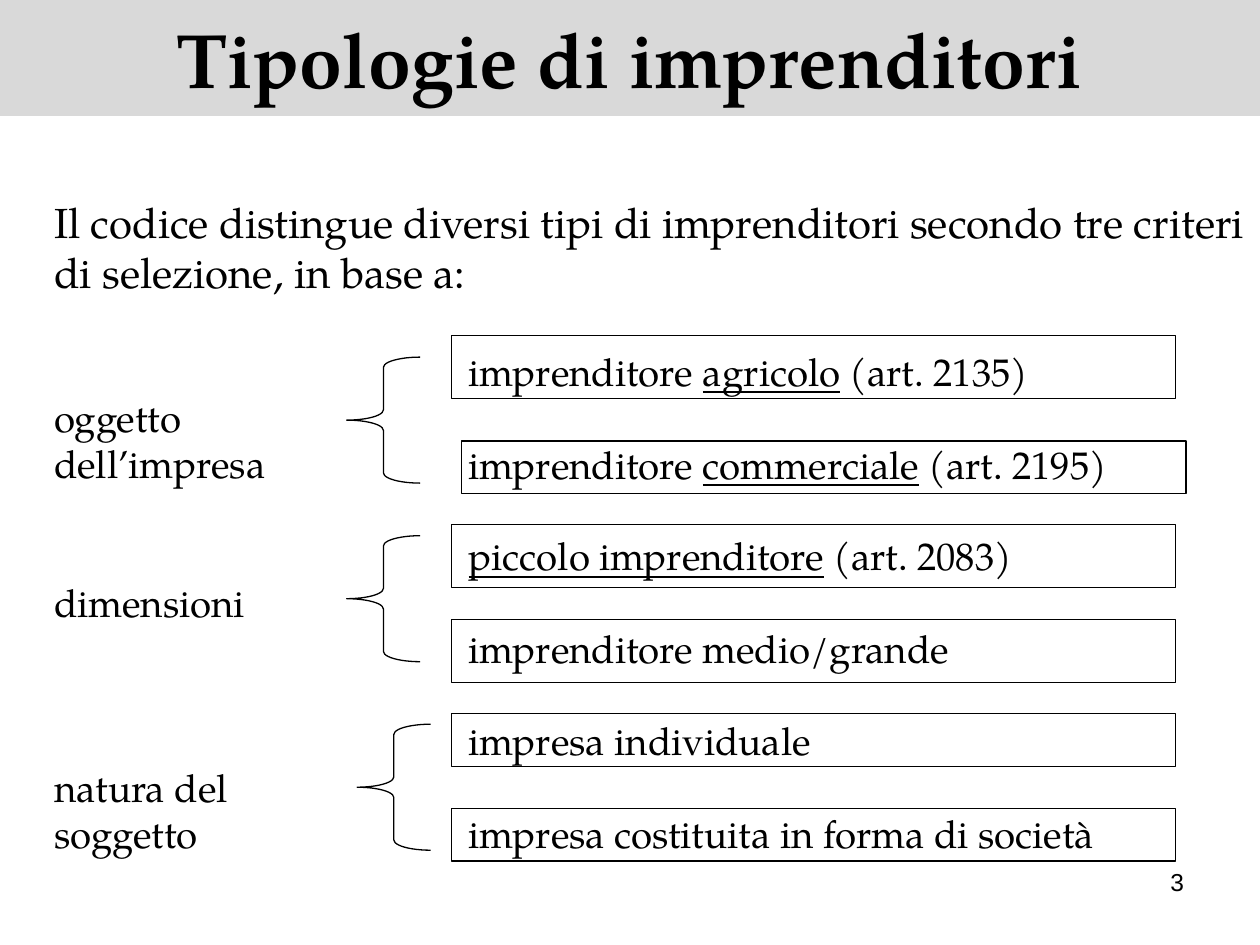
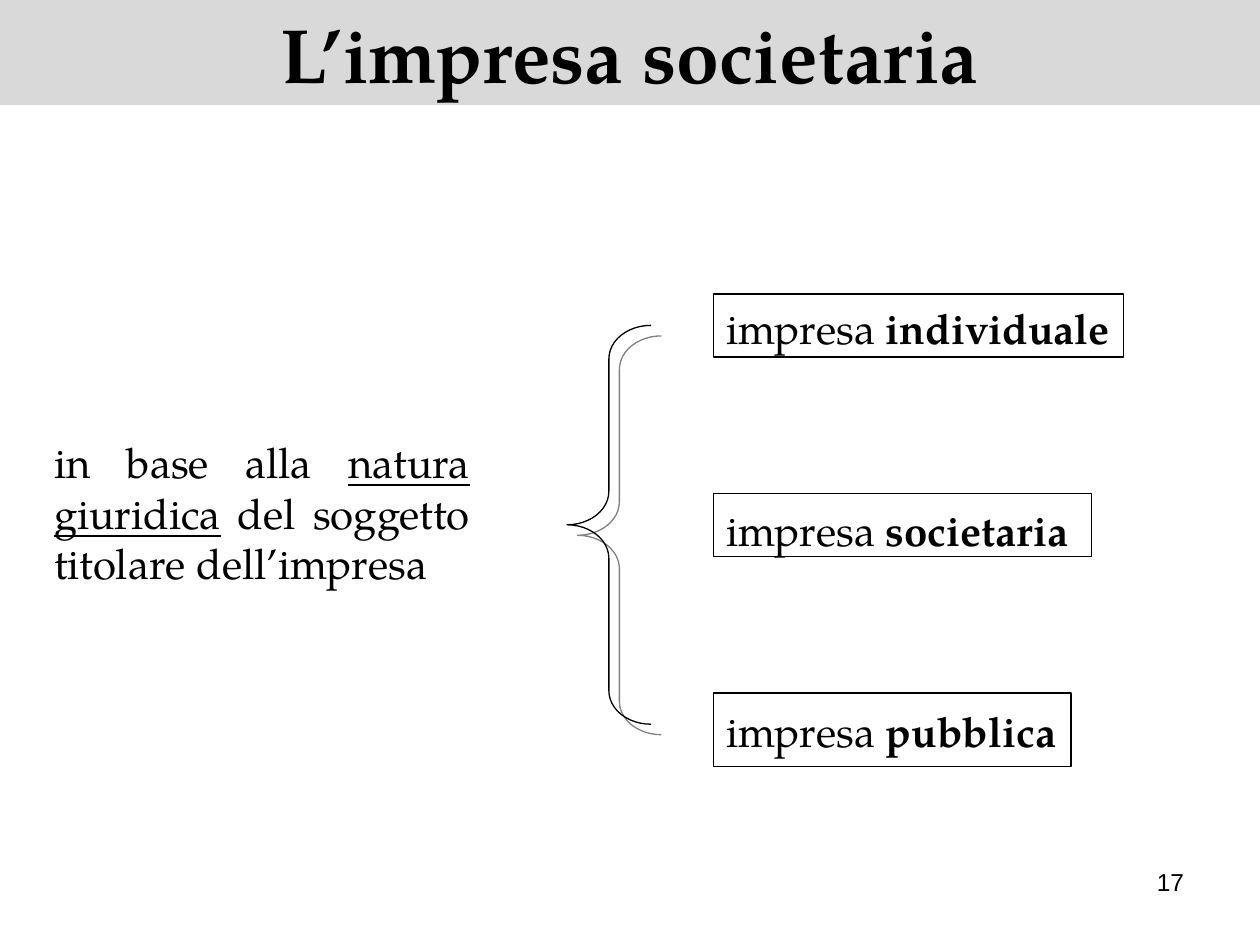
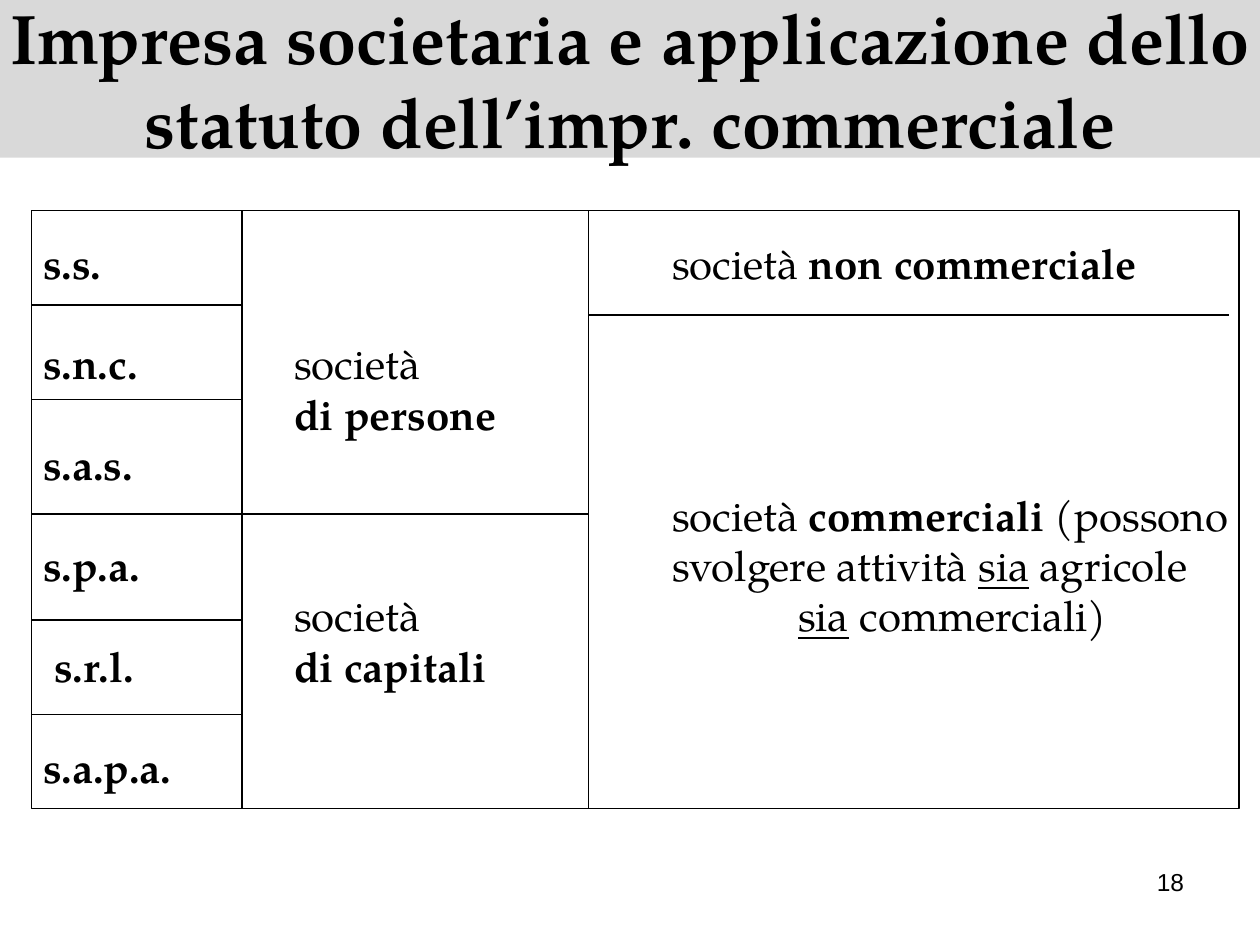
from dataclasses import dataclass

from lxml import etree
from pptx import Presentation
from pptx.dml.color import RGBColor
from pptx.enum import shapes, text
from pptx.oxml import ns
from pptx.util import Cm, Pt


@dataclass(frozen=True)
class Theme:
    ink: RGBColor = RGBColor(0, 0, 0)
    band: RGBColor = RGBColor(0xD9, 0xD9, 0xD9)
    shadow: str = "808080"
    face: str = "TeX Gyre Pagella"
    number_face: str = "Arial"
    title: int = 44
    long_title: int = 40
    body: int = 24
    item: int = 22
    number: int = 14
    rule: float = 0.75

    def pitch(self, size):
        """Height in cm of one line of text."""
        return size * 1.2 * 2.54 / 72


THEME = Theme()
WIDTH, HEIGHT = 25.4, 19.05
MARGIN = 1.09
LEFT, CENTER = text.PP_ALIGN.LEFT, text.PP_ALIGN.CENTER
RIGHT, JUSTIFY = text.PP_ALIGN.RIGHT, text.PP_ALIGN.JUSTIFY


# Text: a paragraph is a list of runs, a run is a string or (string, style)
def write(frame, paragraphs, size, align=LEFT, face=THEME.face, bold=None):
    for index, runs in enumerate(paragraphs):
        para = frame.paragraphs[0] if index == 0 else frame.add_paragraph()
        para.alignment = align
        para.font.name, para.font.size = face, Pt(size)
        para.font.color.rgb = THEME.ink
        para.font.bold = bold
        for words in runs:
            words, style = (words, "") if isinstance(words, str) else words
            run = para.add_run()
            run.text = words
            if style == "bold":
                run.font.bold = True
            elif style == "underline":
                run.font.underline = True


def set_insets(frame, left=0, top=0):
    frame.margin_left, frame.margin_top = Cm(left), Cm(top)
    frame.margin_right = frame.margin_bottom = 0


def add_text(slide, x, y, width, paragraphs, size, align=LEFT, **style):
    height = THEME.pitch(size) * len(paragraphs)
    frame = slide.shapes.add_textbox(Cm(x), Cm(y), Cm(width), Cm(height)).text_frame
    set_insets(frame)
    frame.word_wrap = align != LEFT
    write(frame, paragraphs, size, align, **style)
    return frame


# Outlined shapes and lines
def add_outline(slide, kind, x, y, width, height):
    shape = slide.shapes.add_shape(kind, Cm(x), Cm(y), Cm(width), Cm(height))
    shape.shadow.inherit = False
    shape.fill.background()
    shape.line.color.rgb = THEME.ink
    shape.line.width = Pt(THEME.rule)
    return shape


def add_frame(slide, x, y, width, height):
    return add_outline(slide, shapes.MSO_SHAPE.RECTANGLE, x, y, width, height)


def add_entry(slide, x, y, width, height, runs, size, text_x, text_y):
    """Frame whose text starts at a given point of the slide."""
    frame = add_frame(slide, x, y, width, height).text_frame
    set_insets(frame, text_x - x, max(0, text_y - y))
    frame.vertical_anchor = text.MSO_ANCHOR.TOP
    frame.word_wrap = False
    write(frame, [runs], size)


def add_brace(slide, x, y, width, height, curl):
    brace = add_outline(slide, shapes.MSO_SHAPE.LEFT_BRACE, x, y, width, height)
    brace.adjustments[0] = curl
    return brace


def add_offset_shadow(shape):
    effects = shape._element.spPr.find(ns.qn("a:effectLst"))
    shadow = etree.SubElement(effects, ns.qn("a:outerShdw"), dist=str(Pt(8.5)),
                              dir="2700000", algn="ctr", rotWithShape="0")
    etree.SubElement(shadow, ns.qn("a:srgbClr"), val=THEME.shadow)


def add_rule(slide, x1, y1, x2, y2):
    rule = slide.shapes.add_connector(
        shapes.MSO_CONNECTOR.STRAIGHT, Cm(x1), Cm(y1), Cm(x2), Cm(y2))
    rule.line.color.rgb = THEME.ink
    rule.line.width = Pt(THEME.rule)
    etree.SubElement(rule._element.spPr, ns.qn("a:effectLst"))


# Shared by every slide: title band and page number
def new_slide(deck, title, band_height, number, size=THEME.title):
    slide = deck.slides.add_slide(deck.slide_layouts[6])
    band = add_frame(slide, 0, 0, WIDTH, band_height)
    band.fill.solid()
    band.fill.fore_color.rgb = THEME.band
    band.line.fill.background()
    set_insets(band.text_frame)
    band.text_frame.vertical_anchor = text.MSO_ANCHOR.MIDDLE
    band.text_frame.word_wrap = True
    write(band.text_frame, [[title]], size, CENTER, bold=True)
    add_text(slide, 18.2, 17.48, 5.67, [[number]], THEME.number, RIGHT,
             face=THEME.number_face)
    return slide


def build_types(deck):
    slide = new_slide(deck, "Tipologie di imprenditori", 2.34, "3")
    add_text(slide, MARGIN, 3.96, 24,
             [["Il codice distingue diversi tipi di imprenditori secondo tre criteri"],
              ["di selezione, in base a:"]], THEME.body)

    first_line, pitch = 7.01, THEME.pitch(THEME.item)
    # Entries stand on every second line
    entries = [
        (9.1, 6.77, 1.27, ["imprenditore ", ("agricolo", "underline"), " (art. 2135)"]),
        (9.31, 8.89, 1.06, ["imprenditore ", ("commerciale", "underline"), " (art. 2195)"]),
        (9.1, 10.58, 1.27, [("piccolo imprenditore", "underline"), " (art. 2083)"]),
        (9.1, 12.49, 1.27, ["imprenditore medio/grande"]),
        (9.1, 14.39, 1.06, ["impresa individuale"]),
        (9.1, 16.3, 1.06, ["impresa costituita in forma di società"]),
    ]
    for index, (x, y, height, runs) in enumerate(entries):
        add_entry(slide, x, y, 14.6, height, runs, THEME.item,
                  9.45, first_line + 2 * index * pitch)

    # One criterion and one brace for each pair of entries
    criteria = [
        (["oggetto", "dell’impresa"], 6.99, 7.2),
        (["dimensioni"], 6.99, 10.8),
        (["natura del", "soggetto"], 7.2, 14.6),
    ]
    for index, (lines, brace_x, brace_y) in enumerate(criteria):
        add_text(slide, MARGIN, first_line + (4 * index + 1) * pitch, 5.5,
                 [[line] for line in lines], THEME.item)
        add_brace(slide, brace_x, brace_y, 1.48, 2.54, 0.14)


def build_company(deck):
    slide = new_slide(deck, "L’impresa societaria", 2.12, "17")
    add_text(slide, MARGIN, 8.81, 8.38,
             [["in base alla ", ("natura giuridica", "underline"),
               " del soggetto titolare dell’impresa"]], THEME.body, JUSTIFY)
    add_offset_shadow(add_brace(slide, 11.43, 6.56, 1.69, 8.04, 0.4))

    natures = [
        ("individuale", 5.93, 8.26, 1.27),
        ("societaria", 9.95, 7.62, 1.27),
        ("pubblica", 13.97, 7.2, 1.48),
    ]
    for index, (nature, y, width, height) in enumerate(natures):
        add_entry(slide, 14.39, y, width, height, ["impresa ", (nature, "bold")],
                  THEME.body, 14.64, 6.1 + 4 * index * THEME.pitch(THEME.body))


def build_statute(deck):
    slide = new_slide(
        deck, "Impresa societaria e applicazione dello statuto dell’impr. commerciale",
        3.18, "18", THEME.long_title)

    # Grid
    left, forms_end, groups_end, right = 0.64, 4.88, 11.86, 24.98
    top, middle, bottom = 4.24, 10.36, 16.3
    add_frame(slide, left, top, right - left, bottom - top)
    for x in (forms_end, groups_end):
        add_rule(slide, x, top, x, bottom)
    for y in (6.15, 8.05, 12.5, 14.4):
        add_rule(slide, left, y, forms_end, y)
    add_rule(slide, left, middle, groups_end, middle)
    add_rule(slide, groups_end, 6.35, 24.77, 6.35)

    def line(number):
        return 4.78 + number * THEME.pitch(THEME.body)

    # Legal forms, on every second line
    for index, form in enumerate(["s.s.", "s.n.c.", "s.a.s.", "s.p.a.", "s.r.l.", "s.a.p.a."]):
        x = MARGIN if form == "s.r.l." else 0.87
        add_text(slide, x, line(2 * index), 3.7, [[form]], THEME.body, bold=True)

    # Groups of forms
    for number, group in ((2, "di persone"), (7, "di capitali")):
        add_text(slide, 5.93, line(number), 5.5,
                 [["società"], [(group, "bold")]], THEME.body)

    # Nature of the business
    add_text(slide, 13.55, line(0), 11, [["società ", ("non commerciale", "bold")]],
             THEME.body)
    commercial = add_text(
        slide, 13.55, line(5), 11.3,
        [["società ", ("commerciali", "bold"), " (possono"],
         ["svolgere attività ", ("sia", "underline"), " agricole"],
         [("sia", "underline"), " commerciali)"]], THEME.body)
    commercial.paragraphs[2]._p.get_or_add_pPr().set("marL", str(Cm(2.54)))


def main():
    deck = Presentation()
    deck.slide_width, deck.slide_height = Cm(WIDTH), Cm(HEIGHT)
    build_types(deck)
    build_company(deck)
    build_statute(deck)
    deck.save("out.pptx")


if __name__ == "__main__":
    main()
